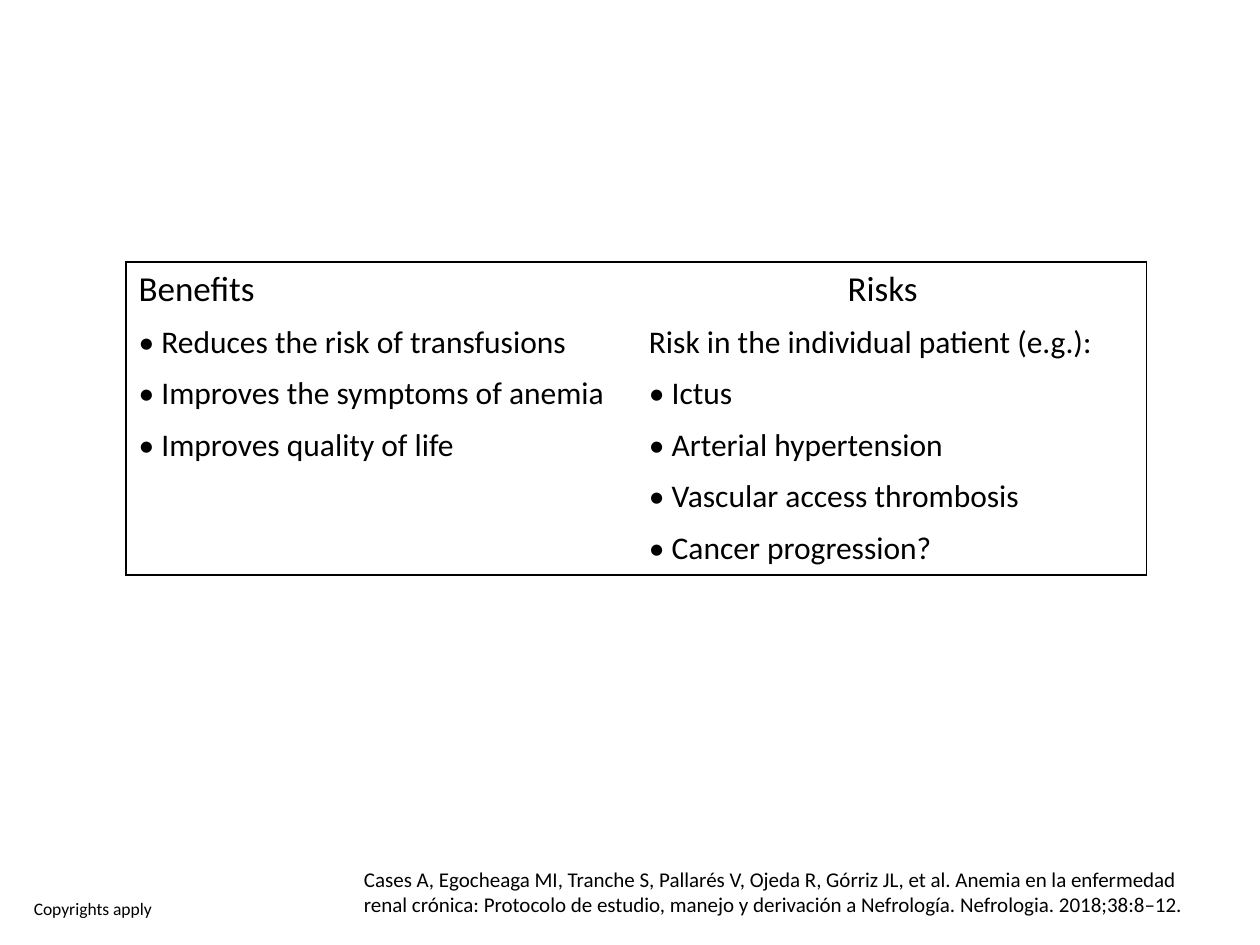
from dataclasses import dataclass

from lxml import etree
from pptx import Presentation
from pptx.dml.color import RGBColor
from pptx.enum import text
from pptx.oxml import ns
from pptx.util import Inches, Pt

BLACK = RGBColor(0x00, 0x00, 0x00)
FONT = "Calibri"
ROW_HEIGHT = 0.41
COLUMN_WIDTH = 4.05

BENEFITS = [
    "Benefits",
    "• Reduces the risk of transfusions",
    "• Improves the symptoms of anemia",
    "• Improves quality of life",
    "",
    "",
]
RISKS = [
    "Risks",
    "Risk in the individual patient (e.g.):",
    "• Ictus",
    "• Arterial hypertension",
    "• Vascular access thrombosis",
    "• Cancer progression?",
]


@dataclass
class Note:
    wording: str
    left: float
    top: float
    width: float
    height: float
    size: int
    wrap: bool


NOTES = [
    Note("Copyrights apply", 0.17, 7.08, 1.24, 0.27, 10, False),
    Note(
        "Cases A, Egocheaga MI, Tranche S, Pallarés V, Ojeda R, Górriz JL, et al. "
        "Anemia en la enfermedad renal crónica: Protocolo de estudio, manejo y "
        "derivación a Nefrología. Nefrologia. 2018;38:8–12.",
        2.79, 6.83, 6.92, 0.5, 12, True,
    ),
]


def style_paragraph(paragraph, size: int) -> None:
    paragraph.font.name = FONT
    paragraph.font.size = Pt(size)
    paragraph.font.color.rgb = BLACK


def add_note(slide, note: Note) -> None:
    box = slide.shapes.add_textbox(
        Inches(note.left), Inches(note.top), Inches(note.width), Inches(note.height)
    )
    frame = box.text_frame
    frame.word_wrap = note.wrap
    frame.auto_size = text.MSO_AUTO_SIZE.SHAPE_TO_FIT_TEXT
    frame.text = note.wording
    style_paragraph(frame.paragraphs[0], note.size)


def set_borders(cell, outer_edges: dict[str, bool]) -> None:
    """Draw a black line on the outer edges and clear the inner ones."""
    properties = cell._tc.get_or_add_tcPr()
    for edge, is_outer in outer_edges.items():
        line = etree.SubElement(properties, ns.qn(f"a:ln{edge}"), w=str(Pt(1)))
        if is_outer:
            fill = etree.SubElement(line, ns.qn("a:solidFill"))
            etree.SubElement(fill, ns.qn("a:srgbClr"), val=str(BLACK))
        else:
            etree.SubElement(line, ns.qn("a:noFill"))


def add_comparison(slide, columns: list[list[str]]) -> None:
    row_count, column_count = len(columns[0]), len(columns)
    table = slide.shapes.add_table(
        row_count, column_count, Inches(1), Inches(2.08),
        Inches(COLUMN_WIDTH * column_count), Inches(ROW_HEIGHT * row_count),
    ).table
    table.first_row = False
    table.horz_banding = False
    for row in table.rows:
        row.height = Inches(ROW_HEIGHT)

    for c, entries in enumerate(columns):
        table.columns[c].width = Inches(COLUMN_WIDTH)
        for r, entry in enumerate(entries):
            cell = table.cell(r, c)
            cell.text = entry
            style_paragraph(cell.text_frame.paragraphs[0], 20 if r == 0 else 18)
            set_borders(cell, {
                "L": c == 0,
                "R": c == column_count - 1,
                "T": r == 0,
                "B": r == row_count - 1,
            })
            cell.fill.background()

    risks_heading = table.cell(0, 1)
    risks_heading.text_frame.paragraphs[0].alignment = text.PP_ALIGN.CENTER
    risks_heading.margin_right = Inches(0.24)


def main() -> None:
    deck = Presentation()
    deck.slide_width, deck.slide_height = Inches(10), Inches(7.5)
    slide = deck.slides.add_slide(deck.slide_layouts[6])
    copyright_note, citation = NOTES
    add_note(slide, copyright_note)
    add_comparison(slide, [BENEFITS, RISKS])
    add_note(slide, citation)
    deck.save("out.pptx")


if __name__ == "__main__":
    main()
